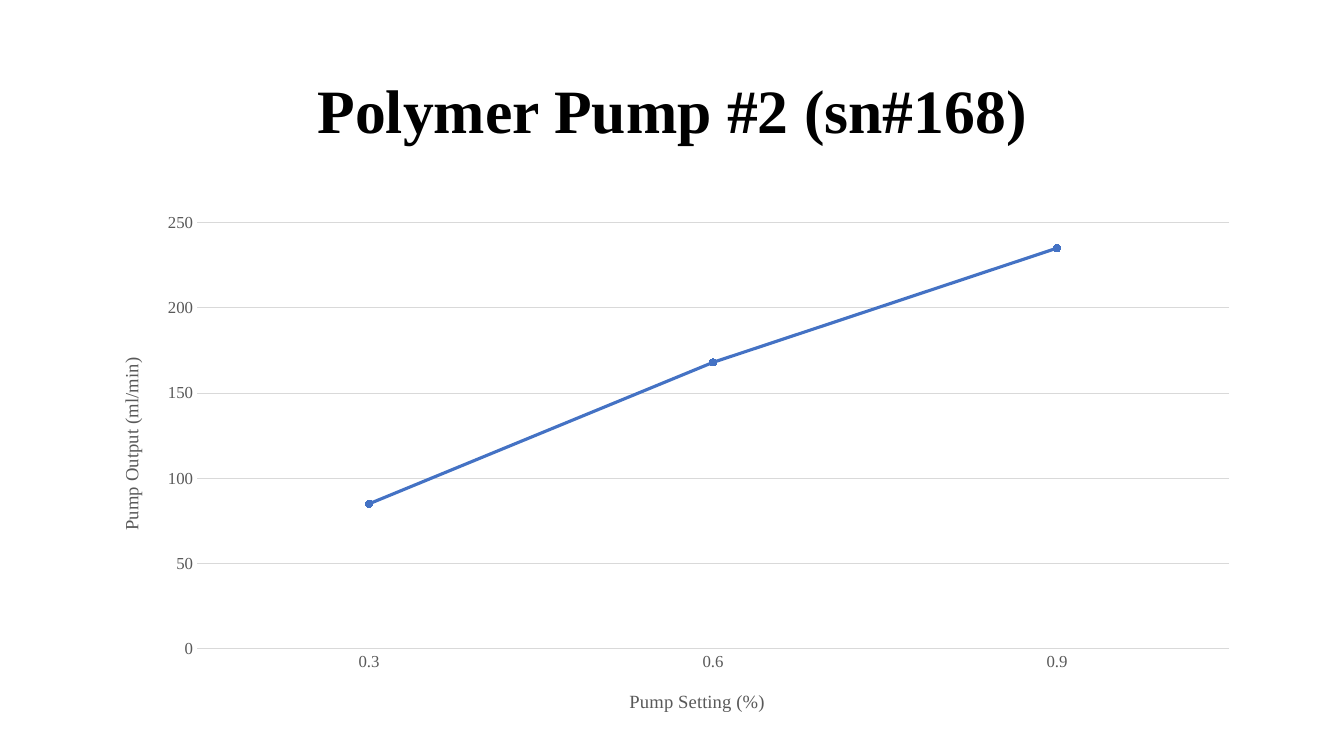
from lxml.etree import SubElement
from pptx import Presentation
from pptx.chart.data import CategoryChartData
from pptx.dml.color import RGBColor
from pptx.enum.chart import XL_CHART_TYPE, XL_MARKER_STYLE, XL_TICK_MARK
from pptx.enum.text import MSO_ANCHOR, PP_ALIGN
from pptx.oxml.ns import qn
from pptx.util import Inches, Pt

COLORS = {"title": "000000", "label": "595959", "rule": "D9D9D9", "series": "4472C4"}
FONT = "Times New Roman"


def rgb(name):
    """Return the named colour."""
    return RGBColor.from_string(COLORS[name])


def set_font(font, size, color, bold=False):
    """Apply the slide's typeface with a size, colour and weight."""
    font.name = FONT
    font.size = Pt(size)
    font.color.rgb = rgb(color)
    font.bold = bold


def set_line(line, color, width):
    """Give a line a solid colour and a width in points."""
    line.color.rgb = rgb(color)
    line.width = Pt(width)


def set_layout(parent, after, **values):
    """Place a chart part by fractions of the chart area."""
    for old in parent.findall(qn("c:layout")):
        parent.remove(old)
    layout = SubElement(parent, qn("c:layout"))
    if after is None:
        parent.insert(0, layout)
    else:
        after.addnext(layout)
    manual = SubElement(layout, qn("c:manualLayout"))
    for tag, value in values.items():
        SubElement(manual, qn(f"c:{tag}")).set("val", str(value))


def add_title(slide, text):
    """Add the centred slide title."""
    box = slide.shapes.add_textbox(Inches(0.92), Inches(0.4), Inches(11.5), Inches(1.45))
    tf = box.text_frame
    tf.word_wrap = True
    tf.vertical_anchor = MSO_ANCHOR.MIDDLE
    p = tf.paragraphs[0]
    p.text = text
    p.alignment = PP_ALIGN.CENTER
    p.line_spacing = 0.9
    set_font(p.font, 44, "title", bold=True)


def style_axis(axis, title, x, y):
    """Style an axis and place its title."""
    axis.major_tick_mark = axis.minor_tick_mark = XL_TICK_MARK.NONE
    set_font(axis.tick_labels.font, 12, "label")
    p = axis.axis_title.text_frame.paragraphs[0]
    p.text = title
    set_font(p.font, 13.3, "label")
    element = axis.axis_title._element
    set_layout(element, element.find(qn("c:tx")), xMode="edge", yMode="edge", x=x, y=y)


def add_pump_chart(slide, settings, outputs):
    """Add the line chart of pump output by setting."""
    data = CategoryChartData()
    data.categories = settings
    data.add_series("Series 1", outputs)
    chart = slide.shapes.add_chart(
        XL_CHART_TYPE.LINE_MARKERS_STACKED,
        Inches(0.92), Inches(2), Inches(11.5), Inches(5.22), data,
    ).chart
    chart.has_legend = chart.has_title = False
    chart.font.name = "Calibri"
    chart.font.size = Pt(10)

    cat, val = chart.category_axis, chart.value_axis
    style_axis(cat, "Pump Setting (%)", 0.46, 0.92)
    style_axis(val, "Pump Output (ml/min)", 0.02, 0.29)
    cat.tick_labels.number_format = "0%"
    cat.tick_labels.number_format_is_linked = False
    set_line(cat.format.line, "rule", 0.75)
    val.minimum_scale, val.maximum_scale, val.major_unit = 0, 250, 50
    val.format.line.fill.background()
    set_line(val.major_gridlines.format.line, "rule", 0.75)

    plot = chart.plots[0]
    plot.vary_by_categories = False
    series = plot.series[0]
    series.smooth = False
    set_line(series.format.line, "series", 2.25)
    marker = series.marker
    marker.style, marker.size = XL_MARKER_STYLE.CIRCLE, 5
    marker.format.fill.solid()
    marker.format.fill.fore_color.rgb = rgb("series")
    set_line(marker.format.line, "series", 0.75)

    area = chart._chartSpace.find(".//" + qn("c:plotArea"))
    set_layout(area, None, layoutTarget="inner", xMode="edge", yMode="edge",
               x=0.09, y=0.04, w=0.89, h=0.81)


def main():
    """Build and save the slide."""
    prs = Presentation()
    prs.slide_width, prs.slide_height = Inches(13.33), Inches(7.5)
    slide = prs.slides.add_slide(prs.slide_layouts[6])
    add_title(slide, "Polymer Pump #2 (sn#168)")
    add_pump_chart(slide, [0.3, 0.6, 0.9], [85, 168, 235])
    prs.save("out.pptx")


if __name__ == "__main__":
    main()
